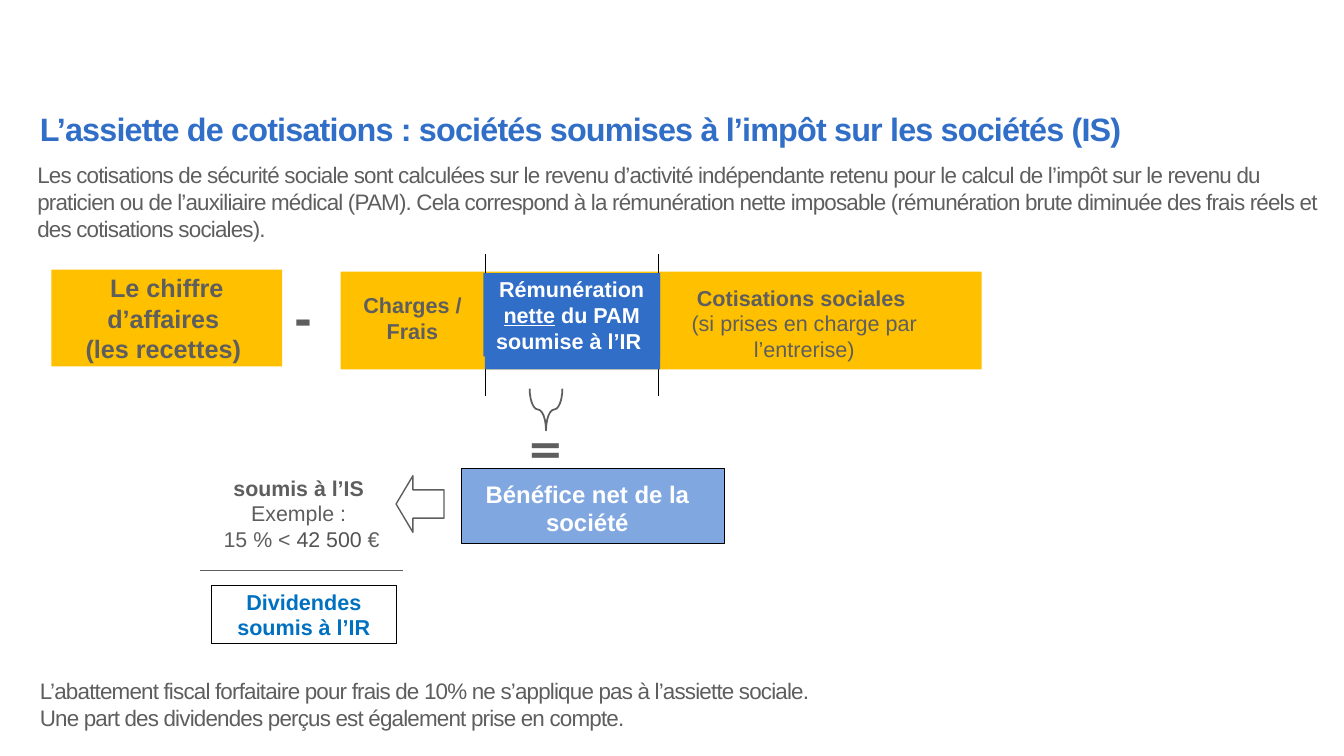
from lxml import etree
from pptx import Presentation
from pptx.dml.color import RGBColor
from pptx.enum.shapes import MSO_CONNECTOR, MSO_SHAPE
from pptx.enum.text import MSO_ANCHOR, PP_ALIGN
from pptx.oxml.ns import qn
from pptx.util import Inches, Pt

GREY = RGBColor(0x5E, 0x5E, 0x5E)
DARK_GREY = RGBColor(0x53, 0x53, 0x53)
BLACK = RGBColor(0, 0, 0)
WHITE = RGBColor(0xFF, 0xFF, 0xFF)
YELLOW = RGBColor(0xFF, 0xC0, 0)
BLUE = RGBColor(0x30, 0x6E, 0xC7)
LIGHT_BLUE = RGBColor(0x80, 0xA7, 0xE0)
LINK_BLUE = RGBColor(0, 0x70, 0xC0)

BREAK = ("\n", {})  # line break inside a paragraph
PLAIN = {"bold": False}


def add_shape(slide, box, fill=None, line=None, width=0.75, kind=MSO_SHAPE.RECTANGLE):
    sp = slide.shapes.add_shape(kind, *map(Inches, box))
    sp.shadow.inherit = False
    if fill is None:
        sp.fill.background()
    else:
        sp.fill.solid()
        sp.fill.fore_color.rgb = fill
    if line is None:
        sp.line.fill.background()
    else:
        sp.line.color.rgb = line
        sp.line.width = Pt(width)
    return sp


def add_line(slide, x1, y1, x2, y2, color, width):
    cn = slide.shapes.add_connector(MSO_CONNECTOR.STRAIGHT, *map(Inches, (x1, y1, x2, y2)))
    cn.line.color.rgb = color
    cn.line.width = Pt(width)
    etree.SubElement(cn._element.spPr, qn("a:effectLst"))


def write(sp, paragraphs, size, color=GREY, bold=True, font="Arial",
          align=PP_ALIGN.CENTER, anchor=MSO_ANCHOR.MIDDLE, inset=None, tracking=None):
    """Fill a shape; each paragraph is a string or a list of (text, font settings)."""
    tf = sp.text_frame
    tf.word_wrap = True
    tf.vertical_anchor = anchor
    if inset is not None:
        tf.margin_left = tf.margin_right = tf.margin_top = tf.margin_bottom = Inches(inset)
    for i, runs in enumerate(paragraphs):
        p = tf.paragraphs[0] if i == 0 else tf.add_paragraph()
        p.alignment = align
        p.font.size, p.font.name, p.font.bold = Pt(size), font, bold
        p.font.color.rgb = color
        for run in [(runs, {})] if isinstance(runs, str) else runs:
            if run == BREAK:
                p.add_line_break()
                continue
            text, style = run
            r = p.add_run()
            r.text = text
            if "color" in style:
                r.font.color.rgb = style["color"]
            if "bold" in style:
                r.font.bold = style["bold"]
            if "underline" in style:
                r.font.underline = style["underline"]
            if tracking:
                r.font._element.set("spc", str(tracking))
    return tf


def add_text(slide, box, paragraphs, size, **style):
    return write(slide.shapes.add_textbox(*map(Inches, box)), paragraphs, size, **style)


def add_prose(slide, box, paragraphs, size=32, inset=0.11, bold=False, **style):
    """Left-aligned running text with tight letter spacing."""
    return add_text(slide, box, paragraphs, size, inset=inset, bold=bold, align=PP_ALIGN.LEFT,
                    anchor=MSO_ANCHOR.TOP, tracking=-120, **style)


def add_revenue_row(slide, x, y):
    """Turnover minus expenses, pay and contributions."""
    turnover = add_shape(slide, (x, y, 4.58, 1.92), YELLOW)
    write(turnover, ["Le chiffre d’affaires ", "(les recettes) "], 36)
    add_text(slide, (x + 4.39, y + 0.4, 1.21, 1.14), ["-"], 61.6, font="DejaVu Sans")
    add_shape(slide, (x + 5.74, y + 0.04, 12.72, 1.94), YELLOW)
    add_text(slide, (x + 5.55, y + 0.39, 3.23, 1.14), ["Charges / Frais"], 30.8)
    add_text(slide, (x + 11.88, y + 0.24, 6.12, 1.65),
             ["Cotisations sociales ", [("(si prises en charge par l’entrerise)", PLAIN)]], 30.8)
    # Limits of the pay block
    for dx in (8.6, 12.04):
        add_line(slide, x + dx, y - 0.32, x + dx, y + 2.51, BLACK, 0.75)
    # Pay block
    add_shape(slide, (x + 8.6, y + 0.14, 3.48, 1.84), BLUE)
    pay = add_shape(slide, (x + 8.57, y + 0.07, 3.51, 1.65), BLUE)
    write(pay, [[("Rémunération ", {}), ("nette", {"underline": True}),
                 (" du PAM soumise à l’IR ", {})]], 30.8, color=WHITE)


def add_profit(slide, x, y):
    """Brace, equals sign and net profit box."""
    brace = add_shape(slide, (x + 1.27, y - 1.49, 0.83, 0.65), line=GREY, width=2.5,
                      kind=MSO_SHAPE.RIGHT_BRACE)
    brace.rotation = 90
    brace.adjustments[0] = 1.215
    add_text(slide, (x + 1.07, y - 0.98, 1.21, 1.14), ["="], 61.6, font="DejaVu Sans")
    add_shape(slide, (x, y, 5.23, 1.48), LIGHT_BLUE, BLACK)
    add_text(slide, (x + 0.08, y + 0.16, 4.85, 1.25), ["Bénéfice net de la société"],
             34.2, color=WHITE)


def add_taxation(slide, x, y):
    """Company tax, then the dividends that remain."""
    add_text(slide, (x, y, 4.85, 1.65),
             ["soumis à l’IS ",
              [("Exemple : ", PLAIN), BREAK, ("15 % < ", PLAIN),
               ("42 500 ", {"bold": False, "color": DARK_GREY}), ("€", PLAIN)]], 30.5)
    arrow = add_shape(slide, (x + 4.3, y + 0.08, 0.95, 1.12), line=GREY, width=2,
                      kind=MSO_SHAPE.LEFT_ARROW)
    arrow.adjustments[1] = 0.351
    add_line(slide, x + 0.4, y + 1.96, x + 4.44, y + 1.96, GREY, 2.25)
    dividends = add_shape(slide, (x + 0.64, y + 2.26, 3.66, 1.14), line=BLACK)
    write(dividends, ["Dividendes soumis à l’IR"], 30.8, color=LINK_BLUE)


def main():
    prs = Presentation()
    prs.slide_width, prs.slide_height = Inches(26.67), Inches(15)
    slide = prs.slides.add_slide(prs.slide_layouts[6])
    # Heading and introduction
    title = add_prose(slide, (0.68, 2.33, 24.8, 1.2),
                      ["L’assiette de cotisations : sociétés soumises à l’impôt sur les sociétés (IS)"],
                      46.2, color=BLUE, bold=True)
    title.paragraphs[0].line_spacing = 0.6
    add_prose(slide, (0.68, 3.14, 25.98, 1.63),
              ["Les cotisations de sécurité sociale sont calculées sur le revenu d’activité "
               "indépendante retenu pour le calcul de l’impôt sur le revenu du praticien ou de "
               "l’auxiliaire médical (PAM). Cela correspond à la rémunération nette imposable "
               "(rémunération brute diminuée des frais réels et des cotisations sociales)."],
              inset=0.06)
    # Calculation
    add_revenue_row(slide, 1.02, 5.35)
    add_profit(slide, 9.15, 9.29)
    add_taxation(slide, 3.56, 9.36)
    # Closing remarks
    add_prose(slide, (0.68, 13.32, 18.79, 1.63),
              ["L’abattement fiscal forfaitaire pour frais de 10% ne s’applique pas à l’assiette sociale.",
               "Une part des dividendes perçus est également prise en compte."])
    prs.save("out.pptx")


if __name__ == "__main__":
    main()
